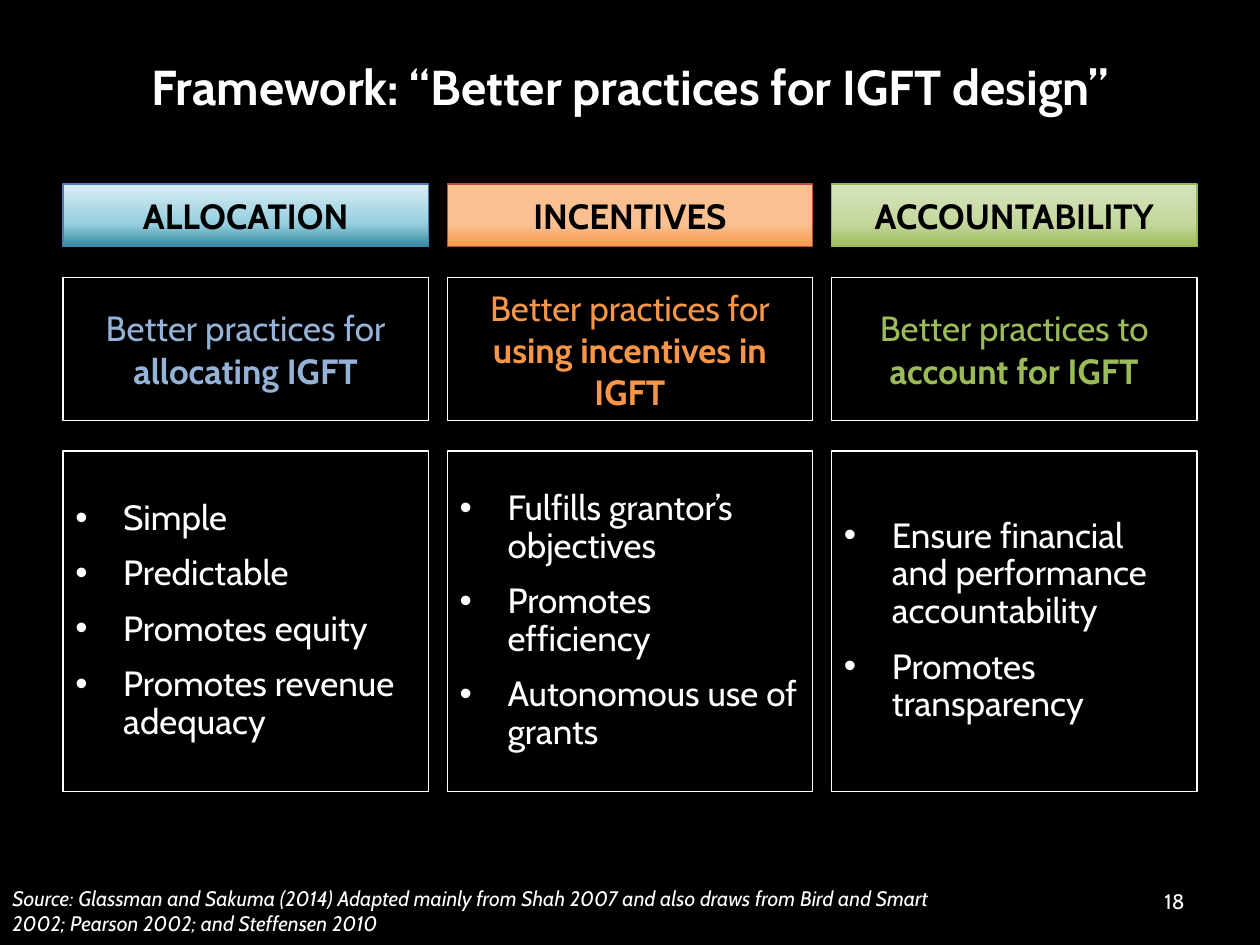
from copy import deepcopy
from dataclasses import dataclass

from lxml.etree import SubElement
from pptx import Presentation
from pptx.dml.color import RGBColor
from pptx.enum.shapes import MSO_SHAPE
from pptx.enum.text import MSO_ANCHOR, PP_ALIGN
from pptx.oxml.ns import qn
from pptx.shapes.autoshape import Shape
from pptx.slide import Slide
from pptx.text.text import _Paragraph as Paragraph
from pptx.util import Inches, Pt


@dataclass(frozen=True)
class Theme:
    font: str = "Cabin"
    background: str = "000000"
    text: str = "FFFFFF"
    heading: str = "000000"
    title_size: int = 28
    body_size: int = 20
    note_size: int = 12
    line_width: float = 0.75


@dataclass(frozen=True)
class Box:
    left: float
    top: float
    width: float
    height: float


@dataclass(frozen=True)
class Row:
    top: float
    height: float


@dataclass(frozen=True)
class Pillar:
    heading: str
    gradient: tuple[str, str, str]  # from bottom to top
    border: str
    accent: str
    lead: str
    emphasis: str
    practices: tuple[str, ...]


THEME = Theme()
SLIDE_WIDTH, SLIDE_HEIGHT = 10, 7.5
MARGIN, GAP = 0.5, 0.15
HEADING_ROW, SUMMARY_ROW, PRACTICES_ROW = Row(1.46, 0.5), Row(2.2, 1.14), Row(3.58, 2.7)
GRADIENT_POSITIONS = (0, 0.35, 1)
BULLET_INDENT = Inches(0.38)

PILLARS = (
    Pillar("ALLOCATION", ("31859C", "93CDDD", "DBEEF4"), "4B7EBC", "95B3D7",
           "Better practices for ", "allocating IGFT",
           ("Simple", "Predictable", "Promotes equity", "Promotes revenue adequacy")),
    Pillar("INCENTIVES", ("F79646", "FAC090", "FAC090"), "BF4C48", "F79646",
           "Better practices for ", "using incentives in IGFT",
           ("Fulfills grantor’s objectives", "Promotes efficiency", "Autonomous use of grants")),
    Pillar("ACCOUNTABILITY", ("9BBB59", "C3D69B", "D7E4BD"), "98B955", "9BBB59",
           "Better practices to ", "account for IGFT",
           ("Ensure financial and performance accountability", "Promotes transparency")),
)


def rgb(value: str) -> RGBColor:
    return RGBColor.from_string(value)


def inches(box: Box) -> tuple[int, ...]:
    return tuple(Inches(length) for length in (box.left, box.top, box.width, box.height))


def grid_box(column: int, row: Row) -> Box:
    count = len(PILLARS)
    width = (SLIDE_WIDTH - 2 * MARGIN - (count - 1) * GAP) / count
    return Box(MARGIN + column * (width + GAP), row.top, width, row.height)


def style(paragraph: Paragraph, size: int, color: str = THEME.text,
          alignment: PP_ALIGN = PP_ALIGN.LEFT) -> None:
    paragraph.alignment = alignment
    paragraph.font.name = THEME.font
    paragraph.font.size = Pt(size)
    paragraph.font.color.rgb = rgb(color)


def add_label(slide: Slide, box: Box, text: str, size: int, alignment: PP_ALIGN,
              bold: bool = False, italic: bool = False) -> None:
    frame = slide.shapes.add_textbox(*inches(box)).text_frame
    frame.word_wrap = True
    frame.vertical_anchor = MSO_ANCHOR.MIDDLE
    paragraph = frame.paragraphs[0]
    paragraph.text = text
    style(paragraph, size, alignment=alignment)
    paragraph.font.bold = bold
    paragraph.font.italic = italic


def add_panel(slide: Slide, box: Box, border: str = THEME.text) -> Shape:
    shape = slide.shapes.add_shape(MSO_SHAPE.RECTANGLE, *inches(box))
    shape.shadow.inherit = False
    shape.fill.solid()
    shape.fill.fore_color.rgb = rgb(THEME.background)
    shape.line.color.rgb = rgb(border)
    shape.line.width = Pt(THEME.line_width)
    shape.text_frame.word_wrap = True
    shape.text_frame.vertical_anchor = MSO_ANCHOR.MIDDLE
    return shape


def fill_upward(shape: Shape, colors: tuple[str, ...]) -> None:
    shape.fill.gradient()
    shape.fill.gradient_angle = 90
    # The default gradient has two stops, so a third is added
    stop_list = shape._element.spPr.find(qn("a:gradFill")).find(qn("a:gsLst"))
    stop_list.append(deepcopy(stop_list[-1]))
    for stop, position, color in zip(shape.fill.gradient_stops, GRADIENT_POSITIONS, colors):
        stop.position = position
        stop.color.rgb = rgb(color)


def add_heading(slide: Slide, box: Box, pillar: Pillar) -> None:
    shape = add_panel(slide, box, pillar.border)
    fill_upward(shape, pillar.gradient)
    frame = shape.text_frame
    frame.margin_left = frame.margin_right = 0
    paragraph = frame.paragraphs[0]
    paragraph.text = pillar.heading
    style(paragraph, THEME.body_size, THEME.heading, PP_ALIGN.CENTER)
    paragraph.font.bold = True


def add_summary(slide: Slide, box: Box, pillar: Pillar) -> None:
    paragraph = add_panel(slide, box).text_frame.paragraphs[0]
    style(paragraph, THEME.body_size, pillar.accent, PP_ALIGN.CENTER)
    paragraph.add_run().text = pillar.lead
    emphasis = paragraph.add_run()
    emphasis.text = pillar.emphasis
    emphasis.font.bold = True


def add_practices(slide: Slide, box: Box, pillar: Pillar) -> None:
    frame = add_panel(slide, box).text_frame
    frame.text = "\n".join(pillar.practices)
    for paragraph in frame.paragraphs:
        paragraph.line_spacing = 0.9
        paragraph.space_after = Pt(10)
        properties = paragraph._p.get_or_add_pPr()
        properties.set("marL", str(BULLET_INDENT))
        properties.set("indent", str(-BULLET_INDENT))
        SubElement(properties, qn("a:buFont"), typeface="Arial")
        SubElement(properties, qn("a:buChar"), char="•")
        style(paragraph, THEME.body_size)


def main() -> None:
    presentation = Presentation()
    presentation.slide_width = Inches(SLIDE_WIDTH)
    presentation.slide_height = Inches(SLIDE_HEIGHT)
    slide = presentation.slides.add_slide(presentation.slide_layouts[6])
    slide.background.fill.solid()
    slide.background.fill.fore_color.rgb = rgb(THEME.background)

    # Title
    add_label(slide, Box(MARGIN, 0.3, SLIDE_WIDTH - 2 * MARGIN, 0.77),
              "Framework: “Better practices for IGFT design”",
              THEME.title_size, PP_ALIGN.CENTER, bold=True)

    # One column for each pillar
    for column, pillar in enumerate(PILLARS):
        add_heading(slide, grid_box(column, HEADING_ROW), pillar)
        add_summary(slide, grid_box(column, SUMMARY_ROW), pillar)
        add_practices(slide, grid_box(column, PRACTICES_ROW), pillar)

    # Source and slide number
    add_label(slide, Box(0, 6.95, 7.91, 0.55),
              "Source: Glassman and Sakuma (2014) Adapted mainly from Shah 2007 and also draws "
              "from Bird and Smart 2002; Pearson 2002; and Steffensen 2010",
              THEME.note_size, PP_ALIGN.LEFT, italic=True)
    add_label(slide, Box(7.17, 6.95, 2.33, 0.4), "18", THEME.note_size, PP_ALIGN.RIGHT)

    presentation.save("out.pptx")


if __name__ == "__main__":
    main()
